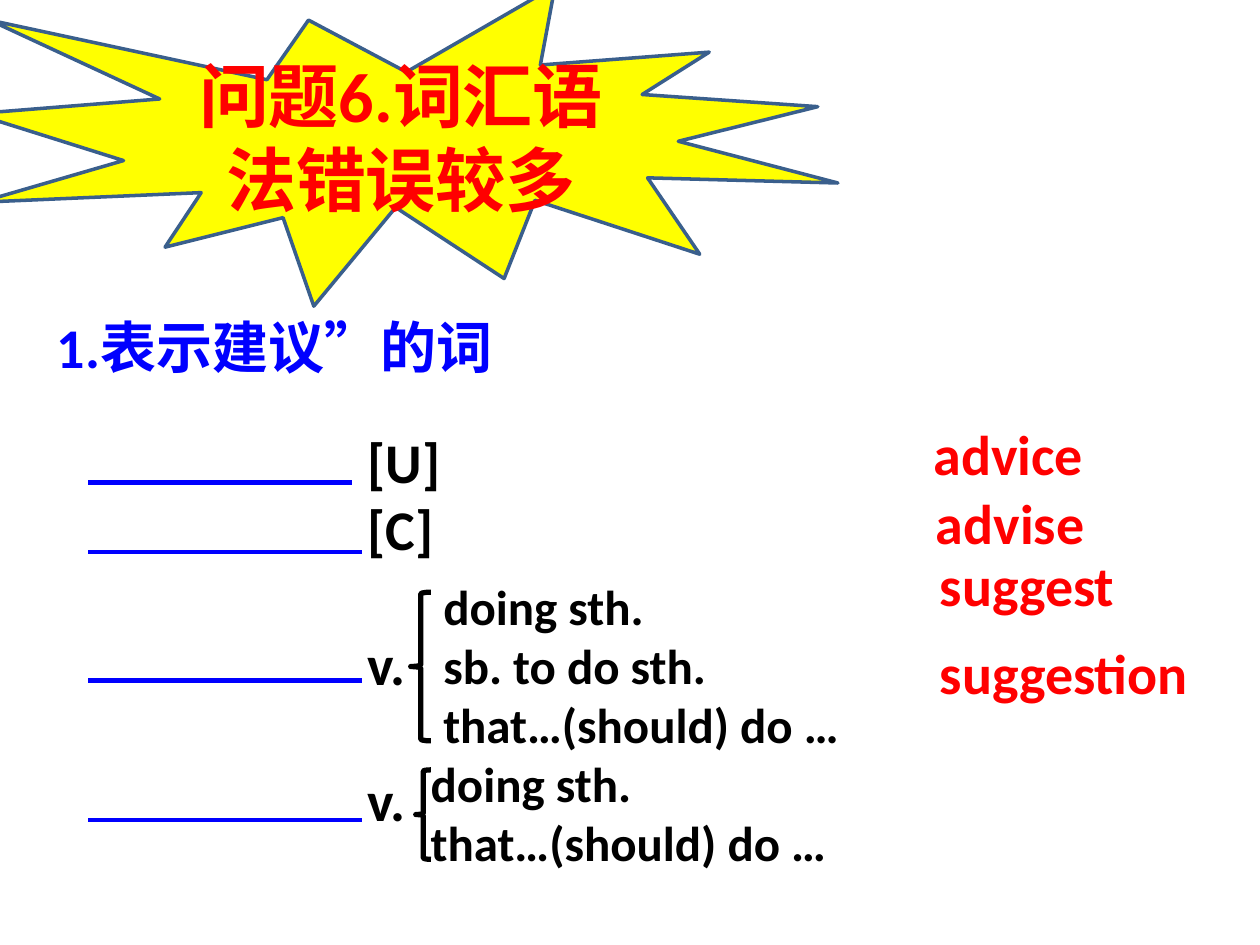
import pptx
import pptx.util
import pptx.dml.color
import pptx.enum.shapes
import pptx.enum.text
import pptx.oxml.ns
import lxml.etree

Inches = pptx.util.Inches
Pt = pptx.util.Pt
RGBColor = pptx.dml.color.RGBColor
SHAPES = pptx.enum.shapes.MSO_SHAPE
ANCHOR = pptx.enum.text.MSO_ANCHOR
ALIGN = pptx.enum.text.PP_ALIGN
FIT = pptx.enum.text.MSO_AUTO_SIZE

RED = RGBColor(0xFF, 0, 0)
BLUE = RGBColor(0, 0, 0xFF)
BLACK = RGBColor(0, 0, 0)
YELLOW = RGBColor(0xFF, 0xFF, 0)
STEEL = RGBColor(0x3A, 0x5F, 0x8C)

WORD_SIZE = 32
BLANK_LINE = 39


def apply_format(target, values):
    for name, value in values.items():
        setattr(target, name, value)


def write_lines(shape, lines, size, color, align=ALIGN.LEFT,
                anchor=ANCHOR.TOP, fit=FIT.SHAPE_TO_FIT_TEXT, gaps=()):
    frame = shape.text_frame
    frame.text = "\n".join(lines)
    apply_format(frame, {"word_wrap": True, "auto_size": fit,
                         "vertical_anchor": anchor})
    for index, para in enumerate(frame.paragraphs):
        space = gaps[index] if gaps else 0
        apply_format(para, {"alignment": align, "space_before": Pt(space)})
        for span in para.runs:
            apply_format(span.font, {"name": "Calibri", "size": Pt(size), "bold": True})
            span.font.color.rgb = color


def add_text(page, area, lines, size, color, gaps=()):
    box = page.shapes.add_textbox(*map(Inches, area))
    write_lines(box, lines, size, color, gaps=gaps)


def add_outlined(page, kind, area, line_color, width, fill=None):
    shape = page.shapes.add_shape(kind, *map(Inches, area))
    shape.shadow.inherit = False
    if fill is None:
        shape.fill.background()
    else:
        shape.fill.solid()
        shape.fill.fore_color.rgb = fill
    shape.line.color.rgb = line_color
    shape.line.width = Pt(width)
    return shape


def add_answer_line(page, left, right, top):
    line = page.shapes.add_connector(
        pptx.enum.shapes.MSO_CONNECTOR.STRAIGHT,
        Inches(left), Inches(top), Inches(right), Inches(top))
    line.line.color.rgb = BLUE
    line.line.width = Pt(2.5)
    lxml.etree.SubElement(line.element.spPr, pptx.oxml.ns.qn("a:effectLst"))


def add_heading(page, text):
    title = page.shapes.title
    apply_format(title, {"left": Inches(0.35), "top": Inches(2.43),
                         "width": Inches(5.28), "height": Inches(0.64)})
    write_lines(title, [text], WORD_SIZE, BLUE, fit=FIT.NONE)


def main():
    deck = pptx.Presentation()
    apply_format(deck, {"slide_width": Inches(10), "slide_height": Inches(7.5)})
    page = deck.slides.add_slide(deck.slide_layouts[5])

    burst = add_outlined(page, SHAPES.EXPLOSION1, (-0.2, -0.11, 6.85, 2.54),
                         STEEL, 2, YELLOW)
    write_lines(burst, ["问题6.词汇语法错误较多"], 40, RED,
                ALIGN.CENTER, ANCHOR.MIDDLE, FIT.NONE)

    add_text(page, (2.82, 3.34, 5.59, 3.33), ["[U]", "[C]", "v.", "v."],
             WORD_SIZE, BLACK, gaps=(0, 0, BLANK_LINE, BLANK_LINE))
    add_heading(page, "1.表示建议”的词")

    for right, top in ((2.79, 3.83), (2.87, 4.38), (2.87, 5.4), (2.87, 6.51)):
        add_answer_line(page, 0.7, right, top)

    for area in ((3.26, 4.7, 0.16, 1.18), (3.3, 6.11, 0.12, 0.71)):
        add_outlined(page, SHAPES.LEFT_BRACE, area, BLACK, 3)

    doing, clause = "doing sth.", "that…(should) do …"
    add_text(page, (3.42, 4.53, 4.3, 1.51),
             [doing, "sb. to do sth.", clause], 28, BLACK)
    add_text(page, (3.32, 5.93, 4.3, 1.04), [doing, clause], 28, BLACK)

    for word, left, top in (("suggest", 7.36, 4.32), ("suggestion", 7.36, 5.02),
                            ("advice", 7.31, 3.28), ("advise", 7.33, 3.83)):
        add_text(page, (left, top, 2.28, 0.64), [word], WORD_SIZE, RED)

    deck.save("out.pptx")


if __name__ == "__main__":
    main()
